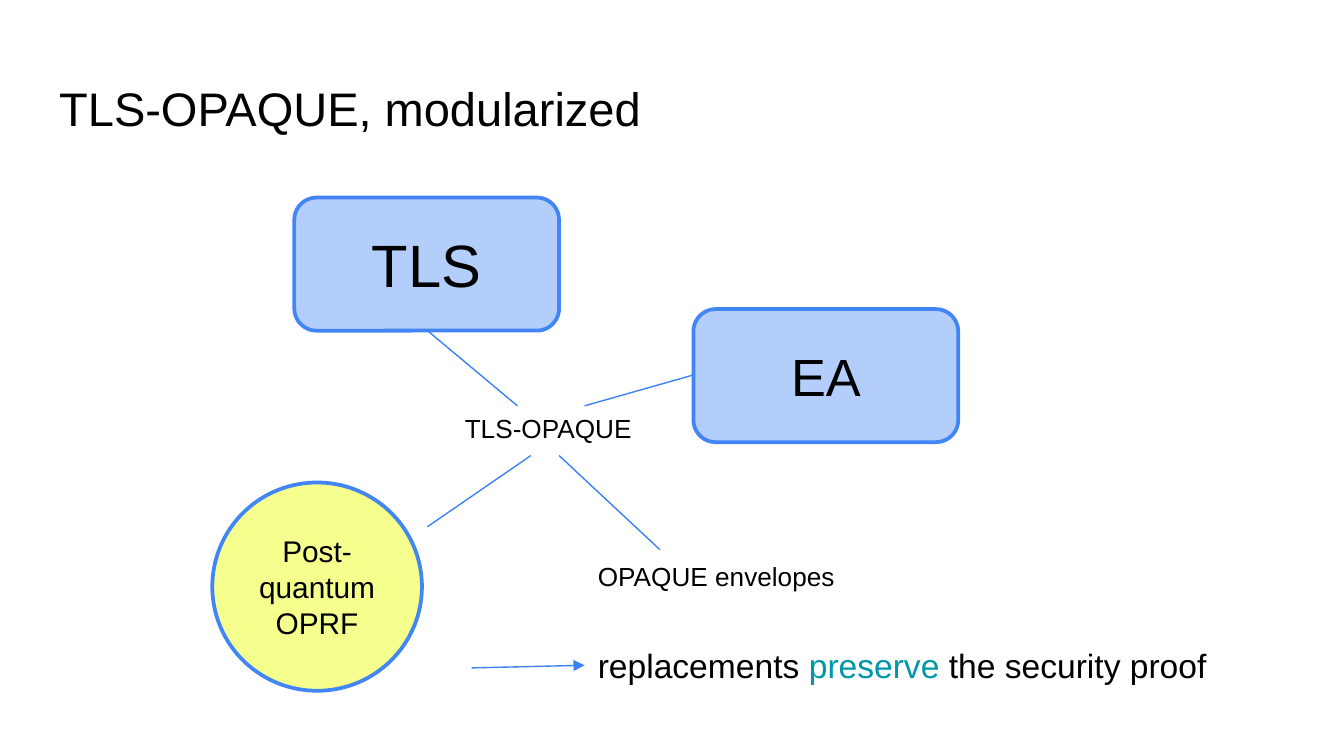
from dataclasses import dataclass

from lxml import etree
from pptx import Presentation
from pptx.dml.color import RGBColor
from pptx.enum.shapes import MSO_CONNECTOR, MSO_SHAPE
from pptx.enum.text import MSO_ANCHOR, MSO_AUTO_SIZE, PP_ALIGN
from pptx.oxml.ns import qn
from pptx.util import Inches, Pt

ROUNDED = MSO_SHAPE.ROUNDED_RECTANGLE
OVAL = MSO_SHAPE.OVAL
STRAIGHT = MSO_CONNECTOR.STRAIGHT
LEFT, CENTER = PP_ALIGN.LEFT, PP_ALIGN.CENTER
TOP, MIDDLE = MSO_ANCHOR.TOP, MSO_ANCHOR.MIDDLE
NO_AUTOFIT = MSO_AUTO_SIZE.NONE


@dataclass(frozen=True)
class Theme:
    font: str = "Arial"
    text: RGBColor = RGBColor.from_string("000000")
    accent: RGBColor = RGBColor.from_string("0097A7")
    outline: RGBColor = RGBColor.from_string("4285F4")
    link: RGBColor = RGBColor.from_string("3C81F3")
    blue: RGBColor = RGBColor.from_string("B3CEFB")
    yellow: RGBColor = RGBColor.from_string("F5FF8D")
    title_size: float = 25.2
    tls_size: int = 32
    ea_size: int = 28
    statement_size: int = 18
    oprf_size: int = 16
    label_size: int = 14


theme = Theme()


def write_text(shape, paragraphs, size, alignment=LEFT, anchor=TOP):
    frame = shape.text_frame
    frame.word_wrap = True
    frame.auto_size = NO_AUTOFIT
    frame.vertical_anchor = anchor
    for index, runs in enumerate(paragraphs):
        paragraph = frame.paragraphs[0] if index == 0 else frame.add_paragraph()
        paragraph.alignment = alignment
        paragraph.font.name = theme.font
        paragraph.font.size = Pt(size)
        paragraph.font.color.rgb = theme.text
        for text, color in runs:
            run = paragraph.add_run()
            run.text = text
            run.font.color.rgb = color


presentation = Presentation()
presentation.slide_width = Inches(10)
presentation.slide_height = Inches(10) * 9 // 16
slide = presentation.slides.add_slide(presentation.slide_layouts[5])

title = slide.shapes.title
title.left, title.top = Inches(0.34), Inches(0.49)
title.width, title.height = Inches(9.32), Inches(0.63)
title.text_frame.margin_top = title.text_frame.margin_bottom = Inches(0.1)
write_text(title, [[("TLS-OPAQUE, modularized", theme.text)]], theme.title_size)

modules = [
    (ROUNDED, 2.19, 1.47, 1.97, 0.99, theme.blue, ["TLS"], theme.tls_size),
    (ROUNDED, 5.16, 2.3, 1.97, 0.99, theme.blue, ["EA"], theme.ea_size),
    (OVAL, 1.58, 3.59, 1.56, 1.55, theme.yellow, ["Post-quantum", "OPRF"], theme.oprf_size),
]
for kind, left, top, width, height, fill, lines, size in modules:
    module = slide.shapes.add_shape(kind, Inches(left), Inches(top), Inches(width), Inches(height))
    module.shadow.inherit = False
    module.fill.solid()
    module.fill.fore_color.rgb = fill
    module.line.color.rgb = theme.outline
    module.line.width = Pt(2)
    write_text(module, [[(line, theme.text)] for line in lines], size, CENTER, MIDDLE)

statement = [
    ("replacements ", theme.text),
    ("preserve", theme.accent),
    (" the security proof", theme.text),
]
labels = [
    (3.36, 3.02, 2.59, 0.57, [("TLS-OPAQUE", theme.text)], theme.label_size),
    (4.35, 4.12, 2.27, 0.34, [("OPAQUE envelopes", theme.text)], theme.label_size),
    (4.35, 4.75, 5.54, 0.4, statement, theme.statement_size),
]
for left, top, width, height, runs, size in labels:
    label = slide.shapes.add_textbox(Inches(left), Inches(top), Inches(width), Inches(height))
    write_text(label, [runs], size)

links = [
    (3.18, 2.46, 3.85, 3.02, False),
    (3.95, 3.39, 3.18, 3.92, False),
    (4.35, 3.02, 5.16, 2.79, False),
    (4.16, 3.39, 4.91, 4.09, False),
    (3.51, 4.97, 4.35, 4.95, True),
]
for start_x, start_y, end_x, end_y, has_arrow in links:
    link = slide.shapes.add_connector(
        STRAIGHT, Inches(start_x), Inches(start_y), Inches(end_x), Inches(end_y)
    )
    link.line.color.rgb = theme.link
    link.line.width = Pt(0.75)
    if has_arrow:
        line_element = link._element.spPr.find(qn("a:ln"))
        etree.SubElement(line_element, qn("a:tailEnd"), type="triangle")
    etree.SubElement(link._element.spPr, qn("a:effectLst"))

presentation.save("out.pptx")
